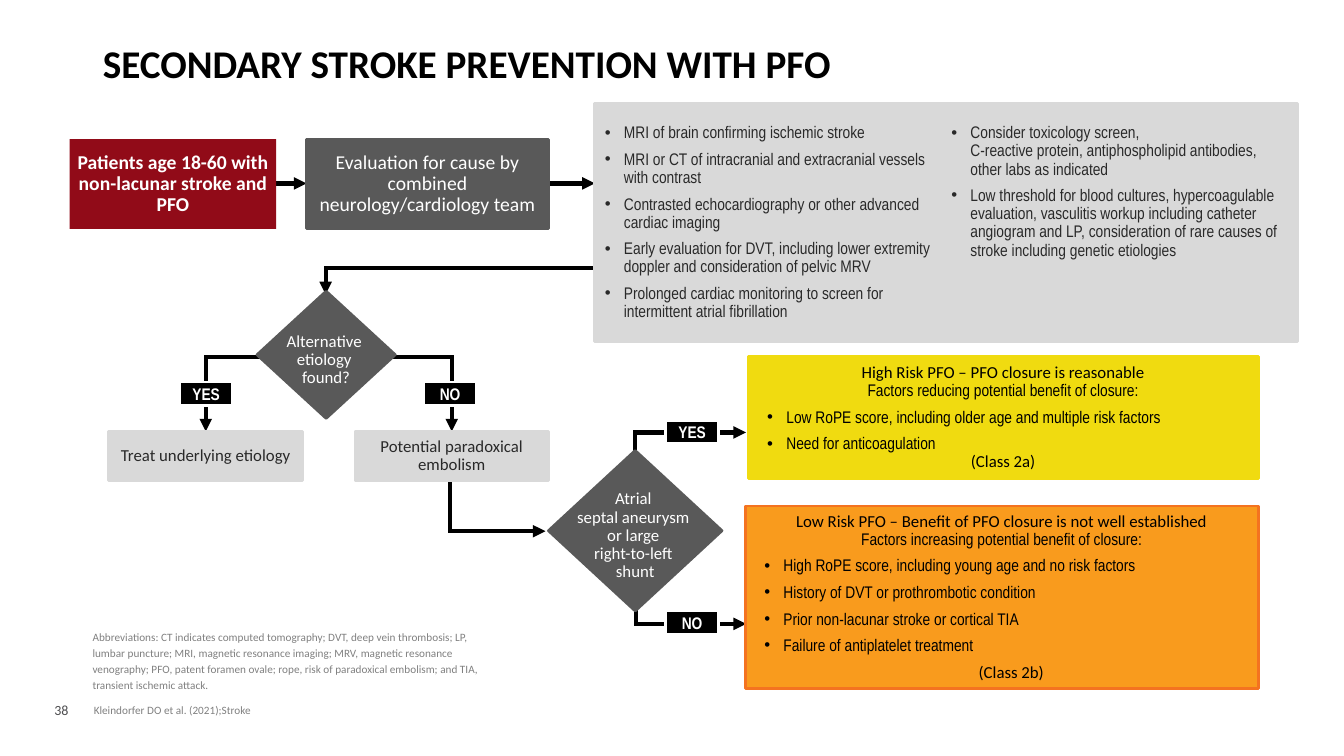
"""Build the slide on secondary stroke prevention with PFO."""
from copy import deepcopy
from dataclasses import dataclass

from lxml import etree
from pptx import Presentation
from pptx.dml.color import RGBColor
from pptx.enum.shapes import MSO_CONNECTOR, MSO_SHAPE
from pptx.enum.text import MSO_ANCHOR, MSO_AUTO_SIZE, PP_ALIGN
from pptx.oxml.ns import qn
from pptx.util import Inches, Pt

RECT, DIAMOND = MSO_SHAPE.RECTANGLE, MSO_SHAPE.DIAMOND
STRAIGHT = MSO_CONNECTOR.STRAIGHT
LEFT, CENTER = PP_ALIGN.LEFT, PP_ALIGN.CENTER
TOP, MIDDLE, BOTTOM = MSO_ANCHOR.TOP, MSO_ANCHOR.MIDDLE, MSO_ANCHOR.BOTTOM
NO_FIT = MSO_AUTO_SIZE.NONE


@dataclass(frozen=True)
class Theme:
    font: str = "Calibri"
    narrow: str = "Arial Narrow"
    black: str = "000000"
    white: str = "FFFFFF"
    ink: str = "292929"
    muted: str = "808080"
    number: str = "4D4D4F"
    dark: str = "595959"
    light: str = "D9D9D9"
    red: str = "910B18"
    yellow: str = "F0DB10"
    orange: str = "F99B1D"
    orange_edge: str = "F47320"
    title: int = 28
    lead: int = 14
    body: int = 12
    page: int = 10
    note: int = 8
    tight: float = 0.9


T = Theme()


def rgb(color):
    return RGBColor.from_string(color)


def add_text(tf, text, first=False, size=T.body, font=T.font, color=T.black, bold=False,
             align=LEFT, spacing=T.tight, before=0, after=0, level=0, margin=0, bullet=False):
    p = tf.paragraphs[0] if first else tf.add_paragraph()
    p.text = text
    p.alignment, p.line_spacing, p.level = align, spacing, level
    p.space_before, p.space_after = Pt(before), Pt(after)
    pPr = p._p.get_or_add_pPr()
    pPr.set("marL", str(Inches(margin)))
    pPr.set("indent", str(Inches(-0.19 if bullet else 0)))
    if bullet:
        etree.SubElement(pPr, qn("a:buFont"), typeface="Arial")
        etree.SubElement(pPr, qn("a:buChar"), char="•")
    else:
        etree.SubElement(pPr, qn("a:buNone"))
    for r in p.runs:
        r.font.name, r.font.size, r.font.bold = font, Pt(size), bold
        r.font.color.rgb = rgb(color)
    for br in p._p.findall(qn("a:br")):
        br.append(deepcopy(p.runs[0]._r.rPr))


class FlowSlide:
    def __init__(self, prs):
        self.s = prs.slides.add_slide(prs.slide_layouts[5])

    def frame(self, sp, paragraphs, anchor=MIDDLE, insets=(0, 0, 0, 0), wrap=True, **fmt):
        tf = sp.text_frame
        tf.auto_size, tf.word_wrap, tf.vertical_anchor = NO_FIT, wrap, anchor
        tf.margin_left, tf.margin_top, tf.margin_right, tf.margin_bottom = map(Inches, insets)
        for i, (text, own) in enumerate(paragraphs):
            add_text(tf, text, first=i == 0, **{**fmt, **own})

    def title(self, text, *box):
        sp = self.s.shapes.title
        sp.left, sp.top, sp.width, sp.height = map(Inches, box)
        self.frame(sp, [(text, {})], BOTTOM, (0.1, 0.05, 0.1, 0.05), size=T.title, bold=True)

    def text(self, text, *box, **fmt):
        sp = self.s.shapes.add_textbox(*map(Inches, box))
        self.frame(sp, [(text, {})], TOP, **fmt)

    def box(self, content, *box, kind=RECT, fill=T.light, edge=None, columns=1, **fmt):
        sp = self.s.shapes.add_shape(kind, *map(Inches, box))
        sp.shadow.inherit = False
        sp.fill.solid()
        sp.fill.fore_color.rgb = rgb(fill)
        sp.line.color.rgb = rgb(edge or fill)
        sp.line.width = Pt(2)
        if fill == T.red:
            sp.line.fill.background()
        paragraphs = [(content, {})] if isinstance(content, str) else content
        self.frame(sp, paragraphs, **{"align": CENTER, **fmt})
        if columns > 1:
            bodyPr = sp.text_frame._txBody.bodyPr
            bodyPr.set("numCol", str(columns))
            bodyPr.set("spcCol", str(Inches(0.1)))

    def diamond(self, text, *box):
        self.box(text, *box, kind=DIAMOND, fill=T.dark, color=T.white,
                 insets=(0, 0.1, 0, 0), wrap=False)

    def badge(self, text, x, y):
        self.box(text, x, y, 0.53, 0.23, fill=T.black, edge=T.white, font=T.narrow,
                 color=T.white, bold=True, spacing=1)

    def arrow(self, *points):
        points = [(Inches(x), Inches(y)) for x, y in points]
        if len(points) == 2:
            sp = self.s.shapes.add_connector(STRAIGHT, *points[0], *points[1])
        else:
            builder = self.s.shapes.build_freeform(*points[0])
            builder.add_line_segments(points[1:], close=False)
            sp = builder.convert_to_shape()
            sp.fill.background()
        sp.line.color.rgb = rgb(T.black)
        sp.line.width = Pt(3)
        ln = sp.line._get_or_add_ln()
        etree.SubElement(ln, qn("a:miter"), lim="800000")
        etree.SubElement(ln, qn("a:tailEnd"), type="triangle")
        etree.SubElement(sp._element.spPr, qn("a:effectLst"))


FACTOR = dict(font=T.narrow, align=LEFT, level=1, margin=0.38, before=6, bullet=True)
HIGH_RISK = [
    ("High Risk PFO – PFO closure is reasonable", {}),
    ("Factors reducing potential benefit of closure:", dict(font=T.narrow)),
    ("Low RoPE score, including older age and multiple risk factors", FACTOR),
    ("Need for anticoagulation", FACTOR),
    ("(Class 2a)", {}),
]
LOW_RISK = [
    ("Low Risk PFO – Benefit of PFO closure is not well established", {}),
    ("Factors increasing potential benefit of closure:", dict(font=T.narrow)),
    ("High RoPE score, including young age and no risk factors", FACTOR),
    ("History of DVT or prothrombotic condition", FACTOR),
    ("Prior non-lacunar stroke or cortical TIA", FACTOR),
    ("Failure of antiplatelet treatment", FACTOR),
    ("(Class 2b)", dict(level=1, margin=0.19, before=6)),
]
WORKUP = [
    "MRI of brain confirming ischemic stroke",
    "MRI or CT of intracranial and extracranial vessels with contrast",
    "Contrasted echocardiography or other advanced cardiac imaging",
    "Early evaluation for DVT, including lower extremity doppler and consideration of pelvic MRV",
    "Prolonged cardiac monitoring to screen for intermittent atrial fibrillation",
    "Consider toxicology screen, \nC-reactive protein, antiphospholipid antibodies, "
    "other labs as indicated",
    "Low threshold for blood cultures, hypercoagulable evaluation, vasculitis workup including "
    "catheter angiogram and LP, consideration of rare causes of stroke including genetic "
    "etiologies",
]
ABBREVIATIONS = (
    "Abbreviations: CT indicates computed tomography; DVT, deep vein thrombosis; LP, lumbar "
    "puncture; MRI, magnetic resonance imaging; MRV, magnetic resonance venography; PFO, patent "
    "foramen ovale; rope, risk of paradoxical embolism; and TIA, transient ischemic attack.")
ARROWS = [
    [(6.31, 5.71), (6.31, 6.19), (7.4, 6.19)],
    [(5.42, 1.82), (5.9, 1.82)],
    [(2.17, 1.82), (3.04, 1.82)],
    [(2.62, 3.54), (2.04, 3.54), (2.04, 4.28)],
    [(3.63, 3.54), (4.48, 3.54), (4.48, 4.28)],
    [(5.9, 2.66), (3.23, 2.66), (3.23, 2.92)],
    [(6.3, 4.87), (6.3, 4.29), (7.4, 4.29)],
    [(4.46, 4.78), (4.46, 5.27), (5.41, 5.27)],
]
BADGES = [("YES", 1.78, 3.79), ("NO", 4.2, 3.79), ("YES", 6.6, 4.17), ("NO", 6.6, 6.06)]


def main():
    prs = Presentation()
    prs.slide_width, prs.slide_height = Inches(13.33), Inches(7.5)
    flow = FlowSlide(prs)
    flow.title("SECONDARY STROKE PREVENTION WITH PFO", 0.92, 0.39, 11.5, 0.52)
    for points in ARROWS:
        flow.arrow(*points)
    flow.box(HIGH_RISK, 7.42, 3.54, 5.06, 1.21, fill=T.yellow)
    flow.box(LOW_RISK, 7.39, 5.02, 5.09, 1.81, fill=T.orange, edge=T.orange_edge)
    flow.box("Patients age 18-60 with non-lacunar stroke and PFO", 0.69, 1.38, 2.05, 0.89,
             fill=T.red, size=T.lead, color=T.white, bold=True)
    flow.box("Evaluation for cause by combined neurology/cardiology team", 3.04, 1.38, 2.4, 0.89,
             fill=T.dark, size=T.lead, color=T.white)
    flow.box([(text, {}) for text in WORKUP], 5.9, 1.03, 6.97, 2.36, columns=2, insets=(0.1,) * 4,
             font=T.narrow, color=T.ink, align=LEFT, margin=0.19, after=6, bullet=True)
    flow.diamond("Alternative \netiology \nfound?", 2.55, 2.89, 1.37, 1.26)
    flow.diamond("Atrial \nseptal aneurysm \nor large \nright-to-left \nshunt",
                 5.44, 4.47, 1.72, 1.59)
    flow.box("Treat underlying etiology", 1.08, 4.28, 1.92, 0.49, color=T.ink)
    flow.box("Potential paradoxical embolism", 3.52, 4.28, 1.92, 0.49, color=T.ink)
    for badge in BADGES:
        flow.badge(*badge)
    flow.text(ABBREVIATIONS, 0.81, 6.18, 4.14, 0.58, insets=(0.1, 0.05, 0.1, 0.05),
              size=T.note, color=T.muted, spacing=1.2, margin=0.01)
    flow.text("Kleindorfer DO et al. (2021);Stroke", 0.92, 6.98, 9.38, 0.13,
              size=T.note, color=T.muted, spacing=1, margin=0.01)
    flow.text("38", 0.44, 6.91, 0.39, 0.27, insets=(0.1, 0.05, 0.1, 0.05), wrap=False,
              size=T.page, color=T.number, spacing=1)
    prs.save("out.pptx")


if __name__ == "__main__":
    main()
